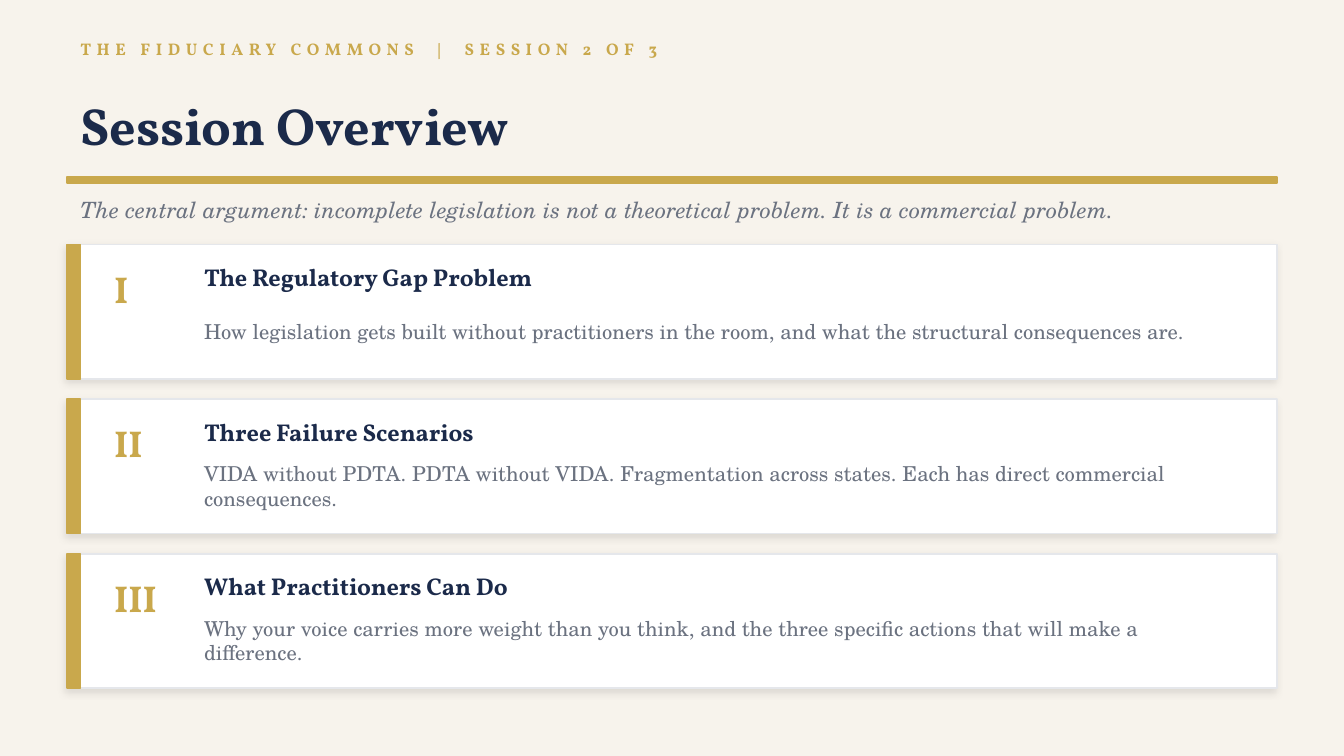
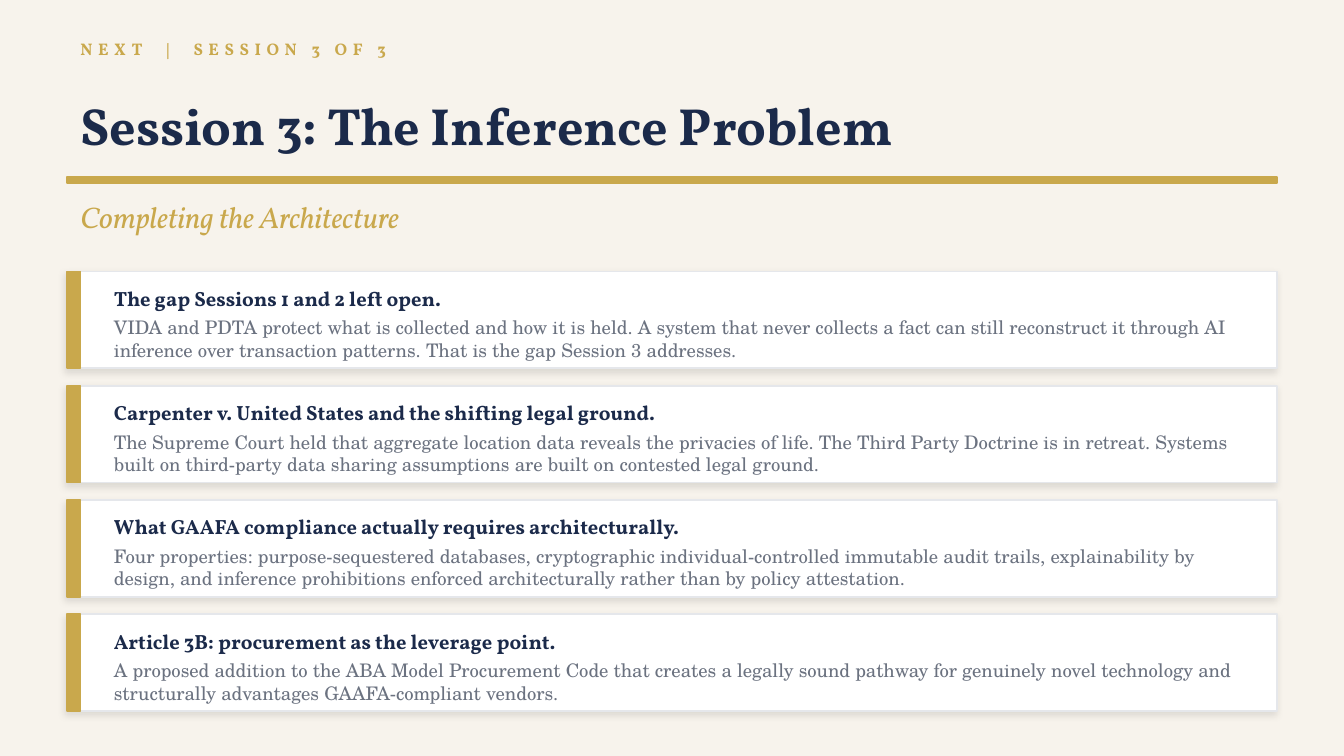
from pptx import Presentation
from pptx.dml.color import RGBColor
from pptx.enum.shapes import MSO_SHAPE as Shape
from pptx.enum.text import MSO_ANCHOR as Anchor, MSO_AUTO_SIZE as AutoSize, PP_ALIGN as Align
from pptx.oxml import parse_xml
from pptx.oxml.ns import nsdecls, qn
from pptx.util import Inches, Pt

# Shared look
CREAM, GOLD, NAVY = "F7F3EC", "C9A84C", "1B2A4A"
GREY, WHITE, EDGE = "6B7280", "FFFFFF", "E5E7EB"
SERIF, BODY = "Vollkorn", "TeX Gyre Schola"

# Grid: 100 columns across, square cells; lengths below are in cells
WIDTH = Inches(10)
HEIGHT = WIDTH * 9 // 16
CELL = WIDTH / 100
MARGIN, CONTENT, BAR = 5, 90, 1
INDENT = 7.5

OVERVIEW = [
    ("I", "The Regulatory Gap Problem",
     "How legislation gets built without practitioners in the room, "
     "and what the structural consequences are."),
    ("II", "Three Failure Scenarios",
     "VIDA without PDTA. PDTA without VIDA. Fragmentation across states. "
     "Each has direct commercial consequences."),
    ("III", "What Practitioners Can Do",
     "Why your voice carries more weight than you think, and the three "
     "specific actions that will make a difference."),
]
NEXT_TOPICS = [
    ("The gap Sessions 1 and 2 left open.",
     "VIDA and PDTA protect what is collected and how it is held. A system that "
     "never collects a fact can still reconstruct it through AI inference over "
     "transaction patterns. That is the gap Session 3 addresses."),
    ("Carpenter v. United States and the shifting legal ground.",
     "The Supreme Court held that aggregate location data reveals the privacies of "
     "life. The Third Party Doctrine is in retreat. Systems built on third-party "
     "data sharing assumptions are built on contested legal ground."),
    ("What GAAFA compliance actually requires architecturally.",
     "Four properties: purpose-sequestered databases, cryptographic "
     "individual-controlled immutable audit trails, explainability by design, and "
     "inference prohibitions enforced architecturally rather than by policy attestation."),
    ("Article 3B: procurement as the leverage point.",
     "A proposed addition to the ABA Model Procurement Code that creates a legally "
     "sound pathway for genuinely novel technology and structurally advantages "
     "GAAFA-compliant vendors."),
]


def color(hex_text):
    return RGBColor.from_string(hex_text)


def cells(*lengths):
    return [round(length * CELL) for length in lengths]


def add_span(para, text, size, font, ink, bold=False, italic=False, spacing=None):
    span = para.add_run()
    span.text = text
    span.font.size, span.font.name = Pt(size), font
    span.font.bold, span.font.italic = bold, italic
    span.font.color.rgb = color(ink)
    if spacing:
        span.font._element.set("spc", str(spacing * 100))


def prepare(box):
    """Set up a middle-anchored, wrapping frame and return its paragraph."""
    frame = box.text_frame
    frame.word_wrap, frame.auto_size = True, AutoSize.NONE
    frame.vertical_anchor = Anchor.MIDDLE
    para = frame.paragraphs[0]
    para.alignment = Align.LEFT
    return para


def add_text(page, place, text, *style, **extra):
    box = page.shapes.add_textbox(*cells(*place))
    add_span(prepare(box), text, *style, **extra)


def add_block(page, place, fill, line):
    block = page.shapes.add_shape(Shape.RECTANGLE, *cells(*place))
    block.shadow.inherit = False
    block.fill.solid()
    block.fill.fore_color.rgb = color(fill)
    block.line.color.rgb = color(line)
    block.line.width = Pt(1)
    return block


def add_soft_shadow(block):
    effects = block._element.spPr.find(qn("a:effectLst"))
    effects.append(parse_xml(
        f'<a:outerShdw {nsdecls("a")} blurRad="{Pt(4)}" dist="{Pt(2)}" '
        f'dir="{135 * 60000}" algn="bl" rotWithShape="0">'
        '<a:srgbClr val="000000"><a:alpha val="10000"/></a:srgbClr></a:outerShdw>'))


def add_card(page, top, height):
    add_soft_shadow(add_block(page, (MARGIN, top, CONTENT, height), WHITE, EDGE))
    add_block(page, (MARGIN, top, BAR, height), GOLD, GOLD)


def add_kicker(page, left_label, right_label):
    box = page.shapes.add_textbox(*cells(MARGIN, 2.2, CONTENT, 2.8))
    para = prepare(box)
    # Wider letter spacing on the spaces opens the gap around the divider
    for text, spacing in ((left_label, 3), (" ", 8), ("|", 3), (" ", 8), (right_label, 3)):
        add_span(para, text, 9, SERIF, GOLD, bold=True, spacing=spacing)


def add_page(deck, kicker, title):
    page = deck.slides.add_slide(deck.slide_layouts[5])
    heading = page.shapes.title
    heading.left, heading.top, heading.width, heading.height = cells(MARGIN, 5.5, CONTENT, 7.5)
    add_span(prepare(heading), title, 28, SERIF, NAVY, bold=True)
    add_kicker(page, *kicker)
    add_block(page, (MARGIN, 13.2, CONTENT, 0.4), GOLD, GOLD)
    return page


def build_overview(deck):
    page = add_page(deck, ("THE FIDUCIARY COMMONS", "SESSION 2 OF 3"), "Session Overview")
    add_text(page, (MARGIN, 14.2, CONTENT, 2.8),
             "The central argument: incomplete legislation is not a theoretical problem. "
             "It is a commercial problem.", 12, BODY, GREY, italic=True)
    left, width = 14.2, 79
    for index, (numeral, heading, detail) in enumerate(OVERVIEW):
        top = 18.2 + 11.5 * index
        add_card(page, top, 10)
        add_text(page, (INDENT, top + 1, 5.5, 4.5), numeral, 20, SERIF, GOLD, bold=True)
        add_text(page, (left, top + 1, width, 2.8), heading, 13, SERIF, NAVY, bold=True)
        add_text(page, (left, top + 4.2, width, 4.5), detail, 11, BODY, GREY)


def build_next_session(deck):
    page = add_page(deck, ("NEXT", "SESSION 3 OF 3"), "Session 3: The Inference Problem")
    add_text(page, (MARGIN, 14.2, CONTENT, 3.8), "Completing the Architecture",
             16, SERIF, GOLD, italic=True)
    for index, (heading, detail) in enumerate(NEXT_TOPICS):
        top = 20.2 + 8.5 * index
        add_card(page, top, 7.2)
        add_text(page, (INDENT, top + 0.8, 85, 2.4), heading, 11, SERIF, NAVY, bold=True)
        add_text(page, (INDENT, top + 3.4, 85, 3.2), detail, 10, BODY, GREY)


def main():
    deck = Presentation()
    deck.slide_width, deck.slide_height = WIDTH, HEIGHT
    backdrop = deck.slide_master.background.fill
    backdrop.solid()
    backdrop.fore_color.rgb = color(CREAM)
    build_overview(deck)
    build_next_session(deck)
    deck.save("out.pptx")


if __name__ == "__main__":
    main()
